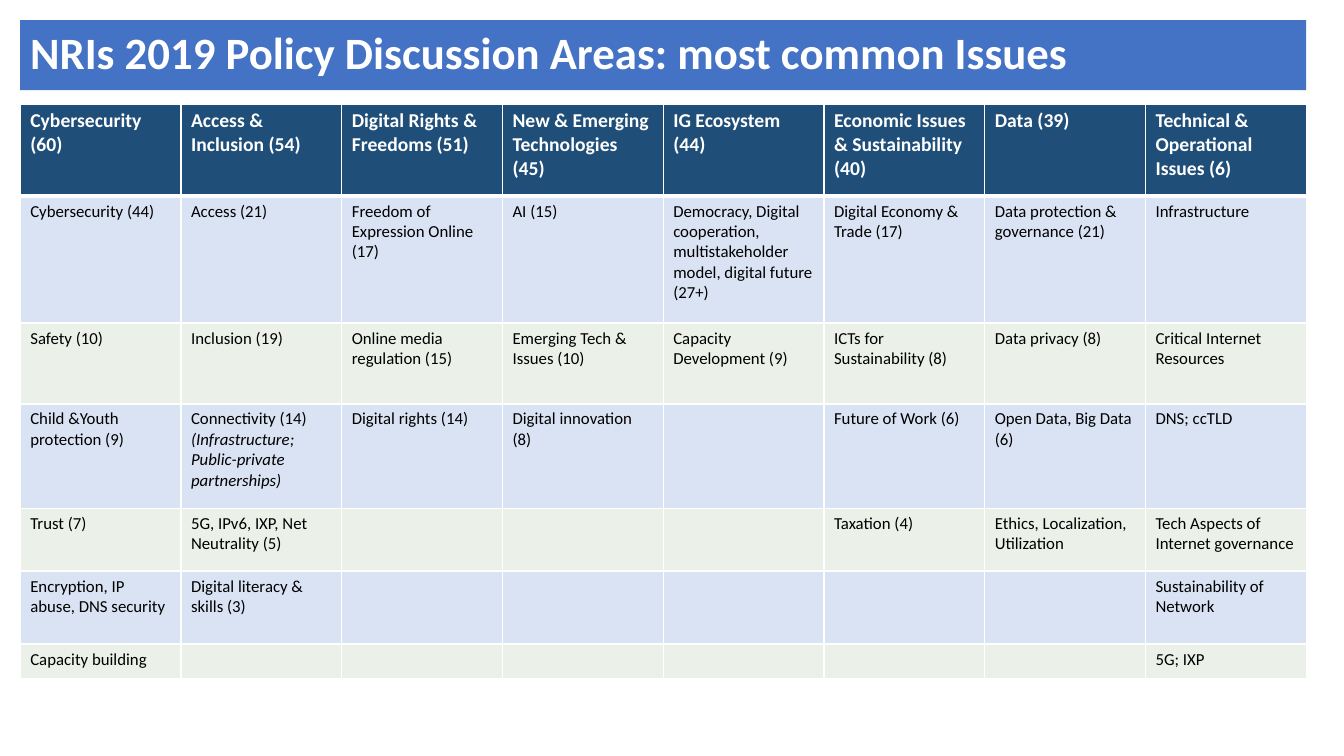
from lxml.etree import SubElement
from pptx import Presentation
from pptx.dml.color import RGBColor
from pptx.enum.shapes import MSO_SHAPE
from pptx.enum.text import MSO_ANCHOR, PP_ALIGN
from pptx.oxml.ns import qn
from pptx.util import Cm, Pt

FONT = "Calibri"
COLORS = {
    "title": "4472C4",
    "header": "1F4E79",
    "odd_row": "DAE3F3",
    "even_row": "EBF1E9",
    "light": "FFFFFF",
    "dark": "000000",
}
LEFT, WIDTH = Cm(0.51), Cm(32.41)
ROW_HEIGHTS = [2.32, 3.2, 2.04, 2.63, 1.58, 1.84, 0.87]

ISSUES = [
    ["Cybersecurity (60)", "Access & Inclusion (54)", "Digital Rights & Freedoms (51)",
     "New & Emerging Technologies (45)", "IG Ecosystem (44)",
     "Economic Issues & Sustainability (40)", "Data (39)",
     "Technical & Operational Issues (6)"],
    ["Cybersecurity (44)", "Access (21)", "Freedom of Expression Online (17)", "AI (15)",
     "Democracy, Digital cooperation, multistakeholder model, digital future (27+)",
     "Digital Economy & Trade (17)", "Data protection & governance (21)", "Infrastructure"],
    ["Safety (10)", "Inclusion (19)", "Online media regulation (15)",
     "Emerging Tech & Issues (10)", "Capacity Development (9)",
     "ICTs for Sustainability (8)", "Data privacy (8)", "Critical Internet Resources"],
    ["Child &Youth protection (9)",
     ("Connectivity (14) ", "(Infrastructure; Public-private partnerships)"),
     "Digital rights (14)", "Digital innovation (8)", "", "Future of Work (6)",
     "Open Data, Big Data (6)", "DNS; ccTLD"],
    ["Trust (7)", "5G, IPv6, IXP, Net Neutrality (5)", "", "", "", "Taxation (4)",
     "Ethics, Localization, Utilization", "Tech Aspects of Internet governance"],
    ["Encryption, IP abuse, DNS security", "Digital literacy & skills (3)",
     "", "", "", "", "", "Sustainability of Network"],
    ["Capacity building", "", "", "", "", "", "", "5G; IXP"],
]


def rgb(name):
    return RGBColor.from_string(COLORS[name])


def format_run(run, size, color, bold=False):
    run.font.name = FONT
    run.font.size = Pt(size)
    run.font.bold = bold
    run.font.color.rgb = rgb(color)


def add_title(slide, text):
    shape = slide.shapes.add_shape(MSO_SHAPE.RECTANGLE, LEFT, Cm(0.51), WIDTH, Cm(1.76))
    shape.shadow.inherit = False
    shape.fill.solid()
    shape.fill.fore_color.rgb = rgb("title")
    shape.line.fill.background()
    frame = shape.text_frame
    frame.text = text
    frame.word_wrap = True
    frame.vertical_anchor = MSO_ANCHOR.MIDDLE
    paragraph = frame.paragraphs[0]
    paragraph.alignment = PP_ALIGN.LEFT
    paragraph.line_spacing = 0.9
    format_run(paragraph.runs[0], 32, "light", True)


def set_borders(cell, top, bottom):
    properties = cell._tc.get_or_add_tcPr()
    for side, points in (("L", 1), ("R", 1), ("T", top), ("B", bottom)):
        line = SubElement(properties, qn(f"a:ln{side}"), w=str(Pt(points)))
        fill = SubElement(line, qn("a:solidFill"))
        SubElement(fill, qn("a:srgbClr"), val=COLORS["light"])


def fill_cell(cell, content, row_index):
    is_header = row_index == 0
    size = 14 if is_header else 12
    set_borders(cell, 3 if row_index == 1 else 1, 3 if is_header else 1)
    cell.fill.solid()
    band = "odd_row" if row_index % 2 else "even_row"
    cell.fill.fore_color.rgb = rgb("header" if is_header else band)
    paragraph = cell.text_frame.paragraphs[0]
    if not content:
        SubElement(paragraph._p, qn("a:endParaRPr"), sz=str(size * 100))
        return
    parts = content if isinstance(content, tuple) else (content,)
    for index, part in enumerate(parts):
        run = paragraph.add_run()
        run.text = part
        format_run(run, size, "light" if is_header else "dark", is_header)
        run.font.italic = index > 0


def add_issue_table(slide):
    column_count = len(ISSUES[0])
    frame = slide.shapes.add_table(len(ISSUES), column_count, LEFT, Cm(2.62),
                                   WIDTH, Cm(sum(ROW_HEIGHTS)))
    table = frame.table
    for column in table.columns:
        column.width = WIDTH // column_count
    for row_index, (contents, height) in enumerate(zip(ISSUES, ROW_HEIGHTS)):
        table.rows[row_index].height = Cm(height)
        for column_index, content in enumerate(contents):
            fill_cell(table.cell(row_index, column_index), content, row_index)


def main():
    presentation = Presentation()
    presentation.slide_width = Cm(33.87)
    presentation.slide_height = Cm(19.05)
    slide = presentation.slides.add_slide(presentation.slide_layouts[6])
    add_title(slide, "NRIs 2019 Policy Discussion Areas: most common Issues")
    add_issue_table(slide)
    presentation.save("out.pptx")


if __name__ == "__main__":
    main()
